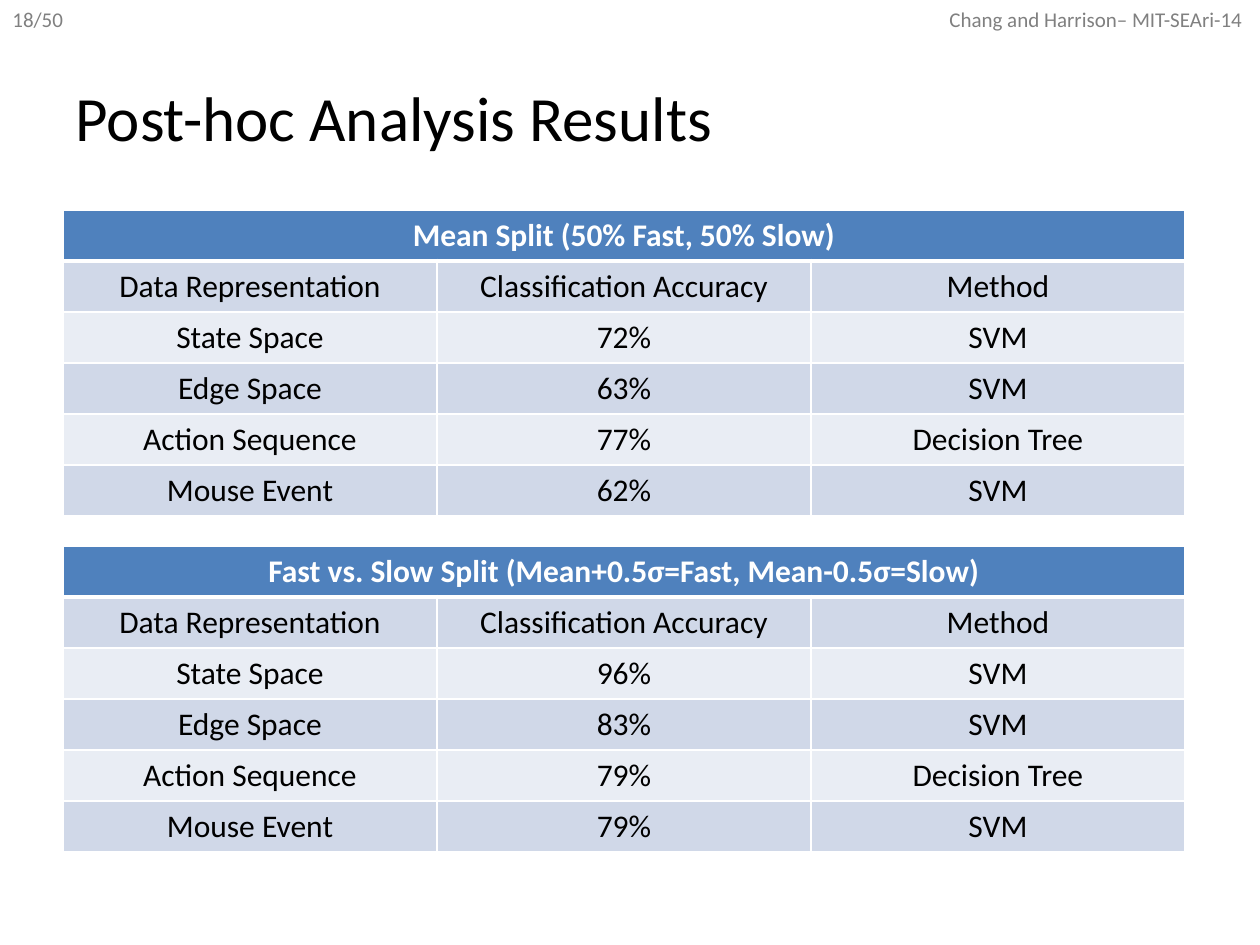
from lxml import etree
from pptx import Presentation
from pptx.dml.color import RGBColor
from pptx.enum.text import MSO_ANCHOR, MSO_AUTO_SIZE, PP_ALIGN
from pptx.oxml.ns import qn
from pptx.util import Emu, Pt

LEFT, CENTER = PP_ALIGN.LEFT, PP_ALIGN.CENTER
MIDDLE = MSO_ANCHOR.MIDDLE
FIT_SHAPE = MSO_AUTO_SIZE.SHAPE_TO_FIT_TEXT
TITLE_ONLY = 5
SCALE = 914400 / 126
HEADER_FILL, BANDS = "4F81BD", ("E9EDF4", "D0D8E8")
COLUMNS = ("Data Representation", "Classification Accuracy", "Method")
FEATURES = ("State Space", "Edge Space", "Action Sequence", "Mouse Event")
METHODS = ("SVM", "SVM", "Decision Tree", "SVM")


def px(n):
    return Emu(round(n * SCALE))


def color(hex_string):
    return RGBColor.from_string(hex_string)


def write(tf, text, size=18, fill="000000", bold=False, align=LEFT):
    p = tf.paragraphs[0]
    p.alignment = align
    r = p.add_run()
    r.text = text
    r.font.name, r.font.size, r.font.bold = "Calibri", Pt(size), bold
    r.font.color.rgb = color(fill)


def add_page_label(s, text, x, y, w, h):
    tf = s.shapes.add_textbox(px(x), px(y), px(w), px(h)).text_frame
    tf.word_wrap = False
    tf.auto_size = FIT_SHAPE
    write(tf, text, size=12, fill="808080")


def add_title(s, text, x, y, w, h):
    sp = s.shapes.title
    sp.left, sp.top, sp.width, sp.height = px(x), px(y), px(w), px(h)
    sp.text_frame.vertical_anchor = MIDDLE
    write(sp.text_frame, text, size=36)


def set_borders(cell, top=1, bottom=1):
    tc_pr = cell._tc.get_or_add_tcPr()
    sides = (("a:lnL", 1), ("a:lnR", 1), ("a:lnT", top), ("a:lnB", bottom))
    for i, (tag, width) in enumerate(sides):
        ln = etree.Element(qn(tag), w=str(Pt(width)))
        solid = etree.SubElement(ln, qn("a:solidFill"))
        etree.SubElement(solid, qn("a:srgbClr"), val="FFFFFF")
        tc_pr.insert(i, ln)


def add_results_table(s, heading, accuracies, x, y, col_w, row_h):
    rows = [(heading, "", ""), COLUMNS, *zip(FEATURES, accuracies, METHODS)]
    n_rows, n_cols = len(rows), len(COLUMNS)
    table = s.shapes.add_table(n_rows, n_cols, px(x), px(y),
                               px(col_w * n_cols), px(row_h * n_rows)).table
    for col in table.columns:
        col.width = px(col_w)
    for i, texts in enumerate(rows):
        table.rows[i].height = px(row_h)
        is_header = i == 0
        for j, text in enumerate(texts):
            cell = table.cell(i, j)
            cell.fill.solid()
            cell.fill.fore_color.rgb = color(HEADER_FILL if is_header else BANDS[i % 2])
            set_borders(cell, top=3 if i == 1 else 1, bottom=3 if is_header else 1)
            if text:
                write(cell.text_frame, text, bold=is_header, align=CENTER,
                      fill="FFFFFF" if is_header else "000000")
    table.cell(0, 0).merge(table.cell(0, n_cols - 1))


def main():
    prs = Presentation()
    prs.slide_width, prs.slide_height = px(1260), px(945)
    s = prs.slides.add_slide(prs.slide_layouts[TITLE_ONLY])
    add_page_label(s, "18/50", 0, 0, 81, 38)
    add_page_label(s, "Chang and Harrison– MIT-SEAri-14", 937, 0, 323, 38)
    add_title(s, "Post-hoc Analysis Results", 63, 38, 1134, 157)
    results = (
        ("Mean Split (50% Fast, 50% Slow)", ("72%", "63%", "77%", "62%")),
        ("Fast vs. Slow Split (Mean+0.5σ=Fast, Mean-0.5σ=Slow)",
         ("96%", "83%", "79%", "79%")),
    )
    for i, (heading, accuracies) in enumerate(results):
        add_results_table(s, heading, accuracies, 63, 210 + 336 * i, 374, 51)
    prs.save("out.pptx")


if __name__ == "__main__":
    main()
